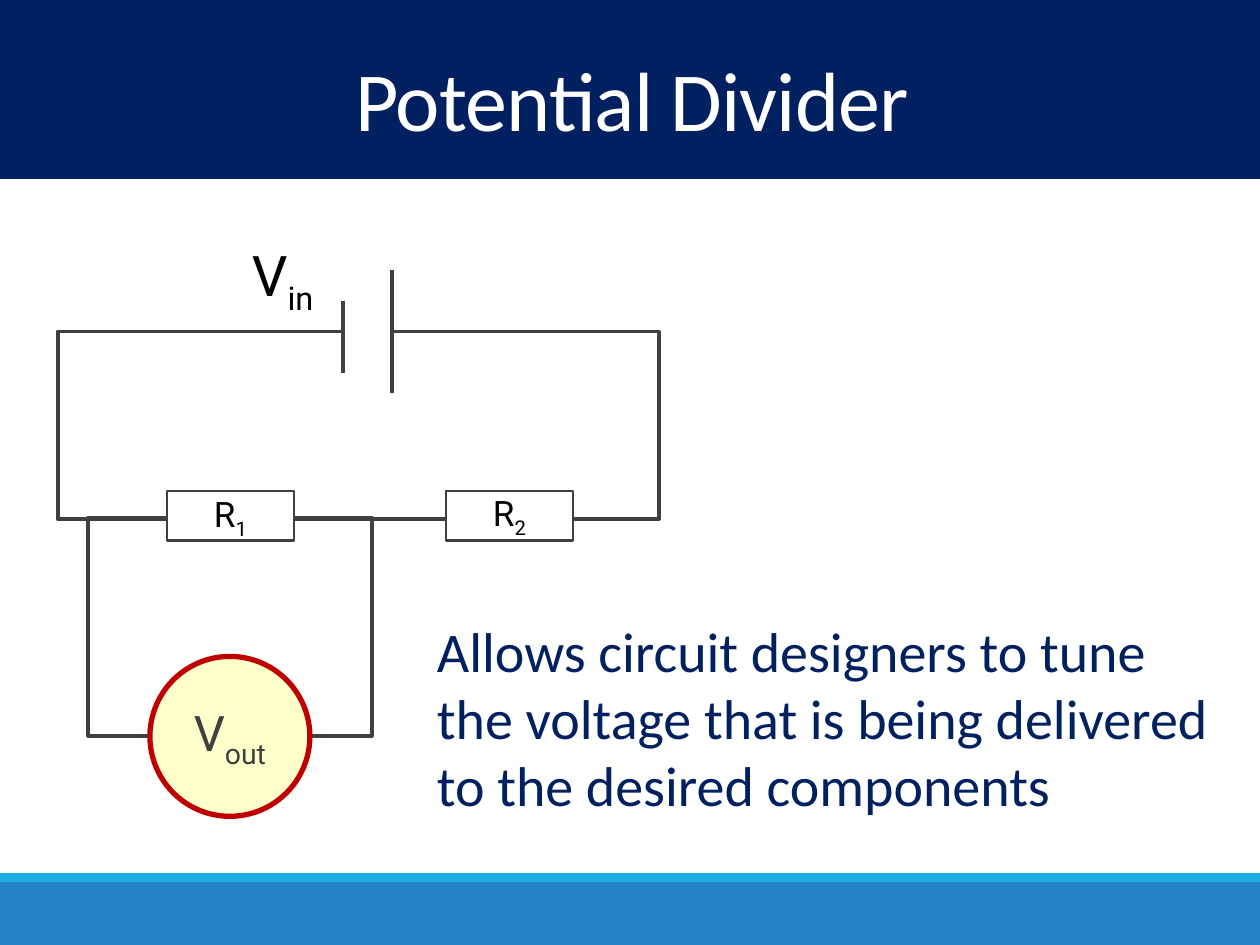
"""Build a slide on the potential divider circuit."""
from lxml import etree
from pptx import Presentation
from pptx.dml.color import RGBColor
from pptx.enum.shapes import MSO_CONNECTOR, MSO_SHAPE
from pptx.enum.text import MSO_ANCHOR, MSO_AUTO_SIZE, PP_ALIGN
from pptx.oxml.ns import qn
from pptx.util import Pt

RECT, OVAL = MSO_SHAPE.RECTANGLE, MSO_SHAPE.OVAL
LINE = MSO_CONNECTOR.STRAIGHT
MIDDLE, CENTER, LEFT = MSO_ANCHOR.MIDDLE, PP_ALIGN.CENTER, PP_ALIGN.LEFT
FIT, FIXED = MSO_AUTO_SIZE.SHAPE_TO_FIT_TEXT, MSO_AUTO_SIZE.NONE

NAVY = RGBColor(0x00, 0x20, 0x60)
BLUE = RGBColor(0x26, 0x83, 0xC6)
CYAN = RGBColor(0x1C, 0xAD, 0xE4)
GREY = RGBColor(0x40, 0x40, 0x40)
RED = RGBColor(0xC0, 0x00, 0x00)
CREAM = RGBColor(0xFF, 0xFF, 0xCC)
WHITE = RGBColor(0xFF, 0xFF, 0xFF)
BLACK = RGBColor(0x00, 0x00, 0x00)

WIDE, HIGH = 720, 540
WIRE = 2.25


def assign(target, values):
    """Set each named attribute of the target."""
    for name, value in values.items():
        setattr(target, name, value)


def add_run(para, text, size, font, color, **extra):
    """Add a run; extra values go to its XML properties."""
    run = para.add_run()
    run.text = text
    assign(run.font, {"size": Pt(size), "name": font})
    run.font.color.rgb = color
    for name, value in extra.items():
        run._r.get_or_add_rPr().set(name, value)


def add_sub(para, base, sub, size, color):
    """Write a symbol with its subscript."""
    add_run(para, base, size, "Roboto", color)
    add_run(para, sub, size, "Roboto", color, baseline="-25000")


def add_box(slide, box, fill=None, edge=None, weight=WIRE, kind=RECT):
    """Draw a plain shape with optional fill and outline."""
    shape = slide.shapes.add_shape(kind, *map(Pt, box))
    shape.shadow.inherit = False
    if fill is None:
        shape.fill.background()
    else:
        shape.fill.solid()
        shape.fill.fore_color.rgb = fill
    if edge is None:
        shape.line.fill.background()
    else:
        shape.line.color.rgb = edge
        shape.line.width = Pt(weight)
    return shape


def add_plate(slide, left, top, end):
    """Draw one upright plate of the cell."""
    line = slide.shapes.add_connector(LINE, *map(Pt, (left, top, left, end)))
    line.line.color.rgb = GREY
    line.line.width = Pt(WIRE)
    etree.SubElement(line._element.spPr, qn("a:effectLst"))


def add_text(slide, box, wrap):
    """Add a text box and return its first paragraph."""
    frame = slide.shapes.add_textbox(*map(Pt, box)).text_frame
    assign(frame, {"word_wrap": wrap, "auto_size": FIT})
    para = frame.paragraphs[0]
    para.alignment = LEFT
    return para


def add_title(slide, text):
    """Place the title on top of its band."""
    title = slide.shapes.title
    spots = {"left": 2.2, "top": 30.2, "width": 717.8, "height": 60.5}
    assign(title, {name: Pt(value) for name, value in spots.items()})
    frame = title.text_frame
    assign(frame, {"vertical_anchor": MIDDLE, "word_wrap": True,
                   "auto_size": FIXED})
    para = frame.paragraphs[0]
    assign(para, {"alignment": CENTER, "line_spacing": 0.85})
    add_run(para, text, 48, "Calibri", WHITE, spc="-50")
    slide.shapes._spTree.append(title._element)


def add_cell(slide):
    """Break the main loop and draw the cell's two plates."""
    add_box(slide, (195.8, 180.7, 28.1, 23.8), WHITE)
    add_plate(slide, 223.9, 154.1, 224.6)
    add_plate(slide, 195.8, 172.1, 213.1)


def add_meter(slide):
    """Draw the voltmeter and its branch."""
    add_box(slide, (50.4, 295.9, 162, 124.6), edge=GREY)
    dial = add_box(slide, (85.7, 375.1, 91.4, 91.4), CREAM, RED, 3, OVAL)
    frame = dial.text_frame
    assign(frame, {"vertical_anchor": MIDDLE, "word_wrap": True})
    para = frame.paragraphs[0]
    para.alignment = CENTER
    add_sub(para, "V", "out", 28, GREY)


def add_load(slide, left, top, sub):
    """Draw a resistor with its label."""
    add_box(slide, (left, 280.8, 72.7, 28.1), WHITE, GREY, 1.25)
    para = add_text(slide, (left + 19.7, top, 33.8, 31.7), False)
    add_sub(para, "R", sub, 20, BLACK)


def main():
    """Build and save the slide."""
    deck = Presentation()
    assign(deck, {"slide_width": Pt(WIDE), "slide_height": Pt(HIGH)})
    slide = deck.slides.add_slide(deck.slide_layouts[5])
    for top, height, fill in ((504, 36, BLUE), (499, 5, CYAN), (0, 102.2, NAVY)):
        add_box(slide, (0, top, WIDE, height), fill)
    add_title(slide, "Potential Divider")
    add_box(slide, (33.1, 189.4, 343.4, 107.3), edge=GREY)
    add_cell(slide)
    add_meter(slide)
    add_load(slide, 95.5, 277.9, "1")
    add_load(slide, 254.9, 277.2, "2")
    para = add_text(slide, (136.8, 133.9, 51.8, 46.1), False)
    add_sub(para, "V", "in", 32, BLACK)
    para = add_text(slide, (242.6, 348.5, 459.4, 123.8), True)
    add_run(para, "Allows circuit designers to tune the voltage that is being "
            "delivered to the desired components", 32, "Calibri", NAVY)
    deck.save("out.pptx")


if __name__ == "__main__":
    main()
